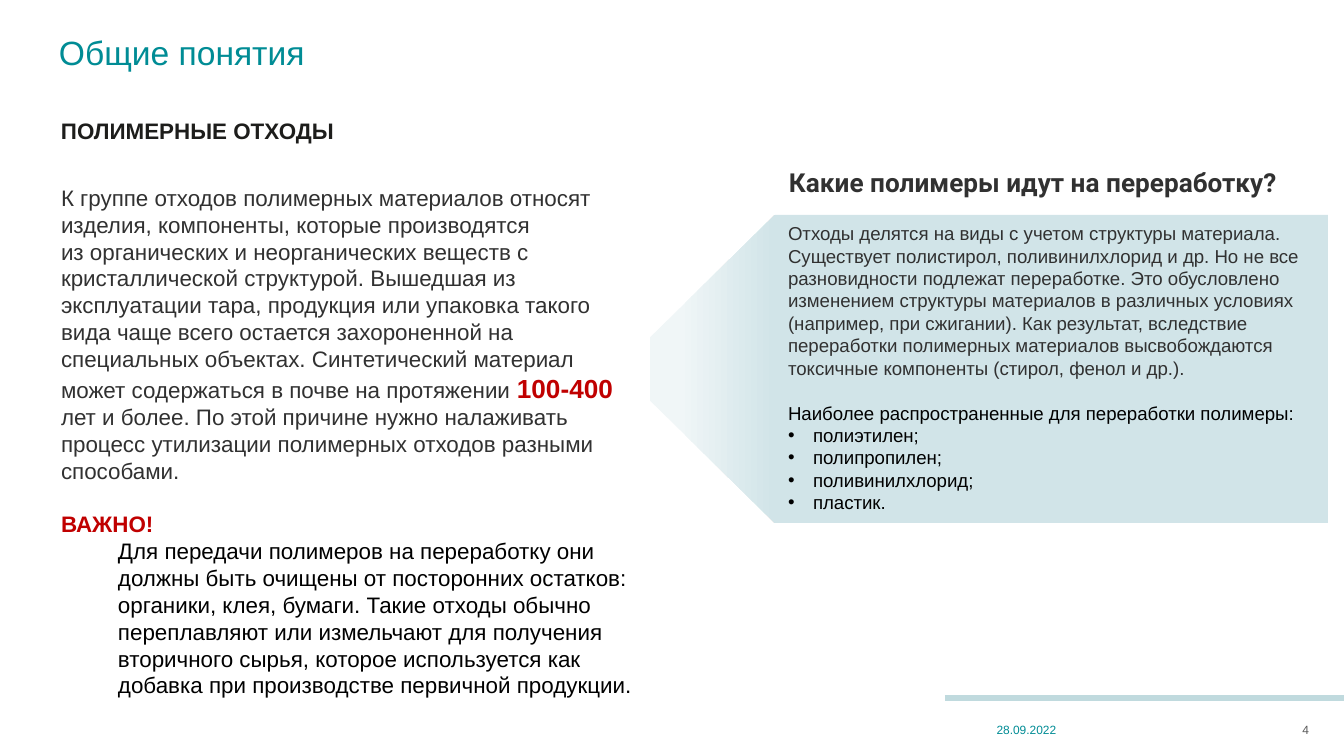
from lxml import etree
from pptx import Presentation
from pptx.dml.color import RGBColor
from pptx.enum.shapes import MSO_CONNECTOR, MSO_SHAPE
from pptx.enum.text import MSO_ANCHOR, PP_ALIGN
from pptx.oxml.ns import qn
from pptx.util import Pt

LEFT, RIGHT = PP_ALIGN.LEFT, PP_ALIGN.RIGHT
TOP, BOTTOM = MSO_ANCHOR.TOP, MSO_ANCHOR.BOTTOM
RECT, TRAPEZOID = MSO_SHAPE.RECTANGLE, MSO_SHAPE.TRAPEZOID
STRAIGHT = MSO_CONNECTOR.STRAIGHT
NBSP = chr(160)  # keeps a short word on the line of its neighbour

THEME = {
    "font": "Arial", "heading_font": "Roboto",
    "teal": "008C95", "grey": "595959", "dark": "1D1D1B", "body": "313131",
    "red": "C00000", "black": "000000",
    "panel": "D1E4E8", "pale": "F0F6F7", "rule": "C0DADE",
    "title": 18, "heading": 14, "text": 12, "small": 10, "footer": 6.4,
}

# Content: a run is (text, size, colour, bold); a paragraph is (runs, options)
TITLE = [([("Общие понятия", "title", "teal", False)], {})]
DATE = [([("28.09.2022", "footer", "teal", False)], {"align": RIGHT})]
NUMBER = [([("4", "footer", "grey", False)], {"align": RIGHT})]
SUBTITLE = [([("ПОЛИМЕРНЫЕ ОТХОДЫ", "text", "dark", True)], {})]
WASTE = [
    ([("К группе отходов полимерных материалов относят изделия, компоненты, "
       f"которые производятся из{NBSP}органических{NBSP}и неорганических "
       "веществ с кристаллической структурой. Вышедшая из эксплуатации тара, "
       "продукция или упаковка такого вида чаще всего остается захороненной "
       "на специальных объектах. Синтетический материал может содержаться в "
       "почве на протяжении ", "text", "body", False),
      ("100-400 ", "heading", "red", True),
      ("лет и более. По этой причине нужно налаживать процесс утилизации "
       "полимерных отходов разными способами.", "text", "body", False)], {}),
    ([("ВАЖНО!", "text", "red", True)], {"before": 14}),
    ([("Для передачи полимеров на переработку они должны быть очищены от "
       "посторонних остатков: органики, клея, бумаги. Такие отходы обычно "
       "переплавляют или измельчают для получения вторичного сырья, которое "
       "используется как добавка при производстве первичной продукции.",
       "text", "black", False)], {"margin": 57}),
]
QUESTION = [([("Какие полимеры идут на переработку?", "heading", "body", True)],
             {"font": "heading_font"})]
POLYMERS = ["полиэтилен;", "полипропилен;", "поливинилхлорид;", "пластик."]
RECYCLING = [
    ([("Отходы делятся на виды с учетом структуры материала. Существует "
       "полистирол, поливинилхлорид и др. Но не все разновидности подлежат "
       "переработке. Это обусловлено изменением структуры материалов в "
       "различных условиях (например, при сжигании). Как результат, "
       "вследствие переработки полимерных материалов высвобождаются "
       "токсичные компоненты (стирол, фенол и др.).",
       "small", "body", False)], {}),
    ([("Наиболее распространенные для переработки полимеры:",
       "small", "black", False)], {"before": 12}),
] + [([(name, "small", "black", False)], {"margin": 25, "bullet": True})
     for name in POLYMERS]


def px(n):
    return round(n * 914400 / 134.4)


def rgb(name):
    return RGBColor.from_string(THEME[name])


def write(sp, paragraphs, inset=True, anchor=TOP, wrap=True):
    tf = sp.text_frame
    tf.word_wrap = wrap
    tf.vertical_anchor = anchor
    side, edge = (px(13), px(7)) if inset else (0, 0)
    tf.margin_left = tf.margin_right = side
    tf.margin_top = tf.margin_bottom = edge
    for i, (runs, opts) in enumerate(paragraphs):
        p = tf.add_paragraph() if i else tf.paragraphs[0]
        p.alignment = opts.get("align", LEFT)
        if "before" in opts:
            p.space_before = Pt(opts["before"])
        if "margin" in opts:
            margin, bullet = px(opts["margin"]), opts.get("bullet")
            pPr = p._p.get_or_add_pPr()
            pPr.set("marL", str(margin))
            pPr.set("indent", str(-margin if bullet else 0))
            if bullet:
                etree.SubElement(pPr, qn("a:buFont"), typeface="Arial")
                etree.SubElement(pPr, qn("a:buChar"), char="•")
        for text, size, colour, bold in runs:
            r = p.add_run()
            r.text = text
            r.font.name = THEME[opts.get("font", "font")]
            r.font.size = Pt(THEME[size])
            r.font.bold = bold
            r.font.color.rgb = rgb(colour)


def add_text(box, paragraphs, **layout):
    write(s.shapes.add_textbox(*map(px, box)), paragraphs, **layout)


def add_plain(shapes, kind, box):
    sp = shapes.add_shape(kind, *map(px, box))
    sp.shadow.inherit = False
    sp.line.fill.background()
    return sp


prs = Presentation()
prs.slide_width, prs.slide_height = px(1344), px(756)
s = prs.slides.add_slide(prs.slide_layouts[6])

# Footer rule, date and slide number
rule = s.shapes.add_connector(STRAIGHT, px(945), px(698), px(1344), px(698))
rule.line.color.rgb = rgb("rule")
rule.line.width = Pt(2.75)
etree.SubElement(rule._element.spPr, qn("a:effectLst"))
add_text((919, 713, 137, 24), DATE, inset=False, anchor=BOTTOM)
add_text((1266, 712, 43, 25), NUMBER, inset=False, anchor=BOTTOM)

# Title and left column
add_text((59, 32, 1247, 70), TITLE, inset=False)
add_text((48, 110, 672, 67), SUBTITLE)
add_text((48, 177, 602, 530), WASTE)

# Panel with a fading pointer on its left side
left, top, width, height = 775, 215, 553, 308
depth = 125
group = s.shapes.add_group_shape()
panel = add_plain(group.shapes, RECT, (left, top, width, height))
panel.fill.solid()
panel.fill.fore_color.rgb = rgb("panel")
write(panel, RECYCLING)

# The pointer is laid flat around its centre, then turned to face left
centre_x, centre_y = left - depth / 2, top + height / 2
pointer = add_plain(group.shapes, TRAPEZOID,
                    (centre_x - height / 2, centre_y - depth / 2, height, depth))
pointer.rotation = 270
pointer.adjustments[0] = 0.98
pointer.fill.gradient()
pointer.fill.gradient_angle = 270
for stop, position, colour in zip(pointer.fill.gradient_stops,
                                  (0.23, 1), ("pale", "panel")):
    stop.position = position
    stop.color.rgb = rgb(colour)

# Panel heading
add_text((776, 159, 540, 46), QUESTION, wrap=False)

prs.save("out.pptx")
